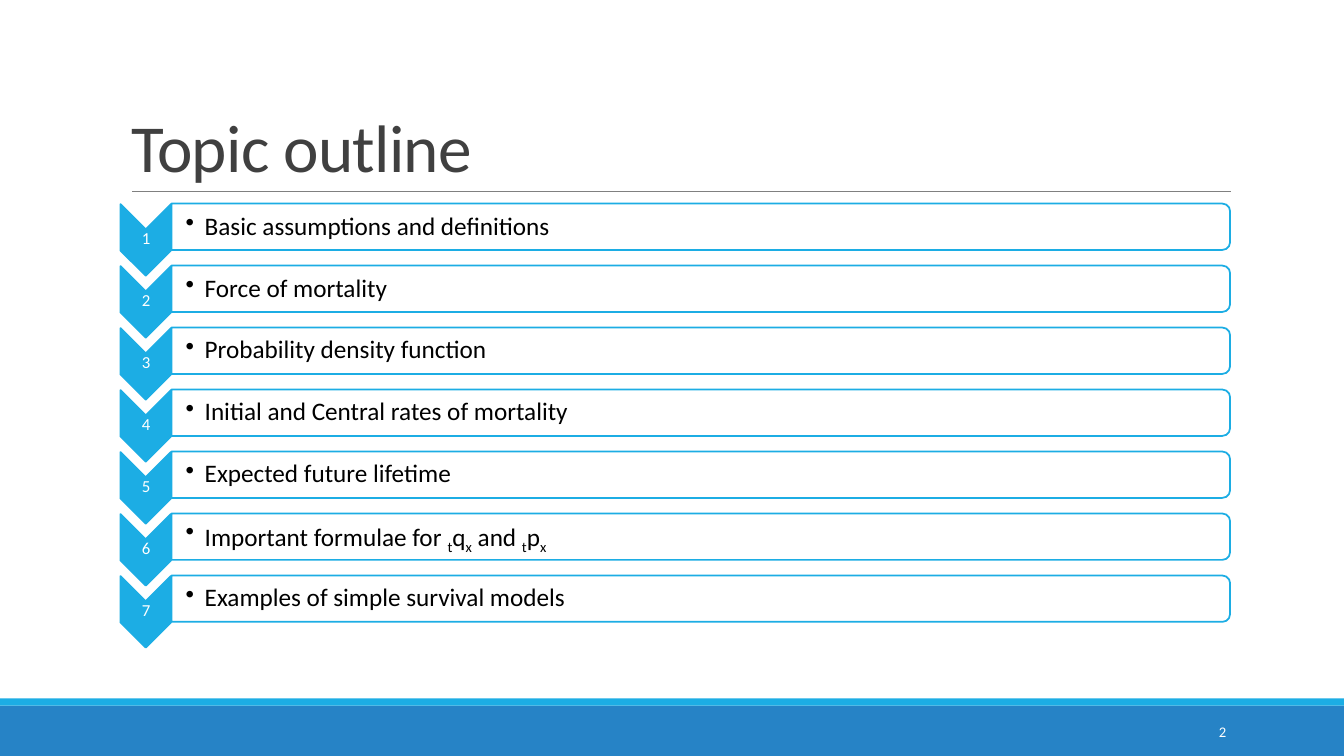
from lxml.etree import SubElement
from pptx import Presentation
from pptx.dml.color import RGBColor as RGB
from pptx.enum.shapes import MSO_CONNECTOR as Link, MSO_SHAPE as Shape
from pptx.enum.text import MSO_ANCHOR as Anchor, PP_ALIGN as Align
from pptx.oxml.ns import qn
from pptx.util import Inches, Pt

CYAN = RGB(0x1C, 0xAD, 0xE4)
BLUE = RGB(0x26, 0x83, 0xC6)
WHITE = RGB(0xFF, 0xFF, 0xFF)
BLACK = RGB(0, 0, 0)
DARK = RGB(0x40, 0x40, 0x40)
GRAY = RGB(0x80, 0x80, 0x80)

TOPICS = [
    "Basic assumptions and definitions",
    "Force of mortality",
    "Probability density function",
    "Initial and Central rates of mortality",
    "Expected future lifetime",
    "Important formulae for |t|q|x| and |t|p|x",
    "Examples of simple survival models",
]

TITLE = {"line_spacing": 0.85, "alignment": Align.LEFT}
NUMBER = {"line_spacing": 0.9, "space_after": Pt(4.2), "alignment": Align.CENTER}
TOPIC = {"level": 1, "line_spacing": 0.9, "space_after": Pt(2.7), "alignment": Align.LEFT}
PAGE = {"alignment": Align.RIGHT}


def assign(target, values):
    for name, value in values.items():
        setattr(target, name, value)


class Deck:
    font = "Calibri"

    def __init__(self, width, height):
        self.show = Presentation()
        self.show.slide_width = Inches(width)
        self.show.slide_height = Inches(height)
        self.slide = self.show.slides.add_slide(self.show.slide_layouts[5])

    def text(self, frame, text, size, color, style, anchor, inset, bullet=False):
        left, rest = inset
        assign(frame, {
            "word_wrap": True, "vertical_anchor": anchor,
            "margin_left": Inches(left), "margin_right": Inches(rest),
            "margin_top": Inches(min(rest, 0.05)),
            "margin_bottom": Inches(min(rest, 0.05)),
        })
        para = frame.paragraphs[0]
        if bullet:
            props = para._p.get_or_add_pPr()
            props.set("marL", str(Inches(0.19)))
            props.set("indent", str(-Inches(0.19)))
            SubElement(props, qn("a:buChar")).set("char", "•")
        assign(para, style)
        for index, part in enumerate(text.split("|")):
            run = para.add_run()
            run.text = part
            assign(run.font, {"name": self.font, "size": Pt(size)})
            run.font.color.rgb = color
            if index % 2:
                run.font._element.set("baseline", "-25000")
        return para

    def title(self, box, text):
        holder = self.slide.shapes.title
        assign(holder, dict(zip(("left", "top", "width", "height"), map(Inches, box))))
        para = self.text(holder.text_frame, text, 48, DARK, TITLE, Anchor.BOTTOM, (0.1, 0.1))
        para.runs[0].font._element.set("spc", "-50")

    def label(self, box, text, size, color, style, inset=(0.1, 0.1), bullet=False):
        frame = self.slide.shapes.add_textbox(*map(Inches, box)).text_frame
        self.text(frame, text, size, color, style, Anchor.MIDDLE, inset, bullet)

    def shape(self, kind, box, fill, line=None, turn=0, alpha=None):
        shape = self.slide.shapes.add_shape(kind, *map(Inches, box))
        shape.shadow.inherit = False
        shape.rotation = turn
        shape.fill.solid()
        shape.fill.fore_color.rgb = fill
        if alpha:
            tint = shape._element.spPr.find(".//" + qn("a:srgbClr"))
            SubElement(tint, qn("a:alpha")).set("val", str(alpha * 1000))
        if line:
            shape.line.color.rgb = line
            shape.line.width = Pt(1.25)
        else:
            shape.line.fill.background()

    def rule(self, ends, color, width):
        line = self.slide.shapes.add_connector(Link.STRAIGHT, *map(Inches, ends))
        line.line.color.rgb = color
        line.line.width = Pt(width)
        SubElement(line._element.spPr, qn("a:effectLst"))

    def topic(self, number, text, mid):
        self.shape(Shape.CHEVRON, (1.09, mid - 0.12, 0.71, 0.5), CYAN, CYAN, 90)
        self.label((1.2, mid + 0.02, 0.5, 0.21), str(number), 12, WHITE, NUMBER, (0.01, 0.01))
        self.shape(Shape.ROUND_2_SAME_RECTANGLE, (6.72, mid - 5.25, 0.46, 10.5),
                   WHITE, CYAN, 90, 90)
        self.label((1.7, mid - 0.21, 10.48, 0.42), text, 18, BLACK, TOPIC, (0.14, 0.01), True)


def main():
    deck = Deck(13.33, 7.5)
    deck.shape(Shape.RECTANGLE, (0, 7, 13.33, 0.5), BLUE)
    deck.shape(Shape.RECTANGLE, (0, 6.93, 13.33, 0.07), CYAN)
    deck.rule((1.31, 1.9, 12.21, 1.9), GRAY, 0.5)
    deck.title((1.2, 0.31, 11, 1.59), "Topic outline")
    first, last = 2.25, 5.94
    step = (last - first) / (len(TOPICS) - 1)
    for index, text in enumerate(TOPICS):
        deck.topic(index + 1, text, first + index * step)
    deck.label((10.83, 7.06, 1.43, 0.4), "2", 10.5, WHITE, PAGE)
    deck.show.save("out.pptx")


if __name__ == "__main__":
    main()
